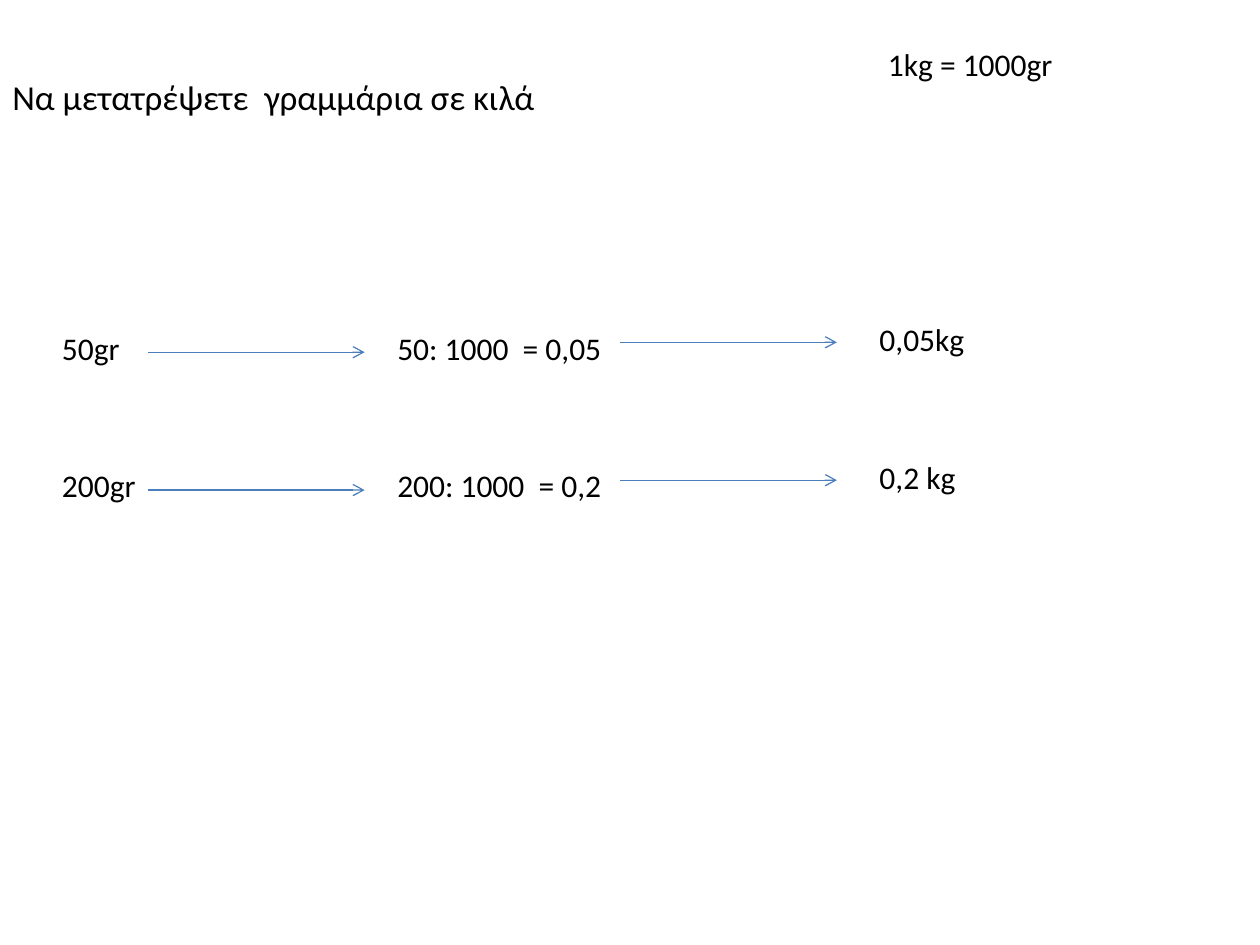
from dataclasses import dataclass

from lxml import etree
from pptx import Presentation
from pptx.dml.color import RGBColor
from pptx.enum.shapes import MSO_CONNECTOR
from pptx.enum.text import MSO_AUTO_SIZE
from pptx.oxml.ns import qn
from pptx.util import Cm, Pt

STRAIGHT = MSO_CONNECTOR.STRAIGHT
FIT_SHAPE = MSO_AUTO_SIZE.SHAPE_TO_FIT_TEXT


@dataclass(frozen=True)
class Theme:
    font: str = "Calibri"
    text: RGBColor = RGBColor(0x00, 0x00, 0x00)
    arrow: RGBColor = RGBColor(0x4B, 0x7E, 0xBC)
    title_size: int = 20
    body_size: int = 18
    line_width: float = 0.75


THEME = Theme()
TEXT_HEIGHT = 1.02
ARROW_LENGTH = 4.37
ROW_TOP, ROW_PITCH = 6.32, 2.78

# Grams, division and kilograms for each row
CONVERSIONS = [
    ("50gr", "50: 1000  = 0,05", "0,05kg"),
    ("200gr", "200: 1000  = 0,2", "0,2 kg"),
]
# Left, top and width of each text, relative to the row
TEXT_CELLS = [(0, 0.18, 2.39), (6.76, 0.18, 5.56), (16.48, 0, 3.96)]
# Left and top of each arrow, relative to the row
ARROW_STARTS = [(1.98, 0.78), (11.5, 0.58)]


def add_text(slide, text, left, top, width, height=TEXT_HEIGHT, size=THEME.body_size):
    s = slide.shapes.add_textbox(Cm(left), Cm(top), Cm(width), Cm(height))
    tf = s.text_frame
    tf.word_wrap = True
    tf.auto_size = FIT_SHAPE
    r = tf.paragraphs[0].add_run()
    r.text = text
    for name, value in {"name": THEME.font, "size": Pt(size)}.items():
        setattr(r.font, name, value)
    r.font.color.rgb = THEME.text


def add_arrow(slide, left, top):
    s = slide.shapes.add_connector(
        STRAIGHT, Cm(left), Cm(top), Cm(left + ARROW_LENGTH), Cm(top)
    )
    s.line.color.rgb = THEME.arrow
    s.line.width = Pt(THEME.line_width)
    etree.SubElement(s.line._get_or_add_ln(), qn("a:tailEnd"), type="arrow")
    etree.SubElement(s._element.spPr, qn("a:effectLst"))


def add_header(slide, left, top):
    # Task and the unit rule
    add_text(slide, "Nα μετατρέψετε  γραμμάρια σε κιλά", left, top + 0.61, 22.63,
             height=1.12, size=THEME.title_size)
    add_text(slide, "1kg = 1000gr", left + 17.65, top, 5.77)


def add_conversion(slide, texts, left, top):
    # Grams, division and kilograms, joined by arrows
    for text, (dx, dy, width) in zip(texts, TEXT_CELLS):
        add_text(slide, text, left + dx, top + dy, width)
    for dx, dy in ARROW_STARTS:
        add_arrow(slide, left + dx, top + dy)


def main():
    prs = Presentation()
    prs.slide_width, prs.slide_height = Cm(25.4), Cm(19.05)
    slide = prs.slides.add_slide(prs.slide_layouts[6])
    add_header(slide, 0, 0.79)
    for i, texts in enumerate(CONVERSIONS):
        add_conversion(slide, texts, 1, ROW_TOP + i * ROW_PITCH)
    prs.save("out.pptx")


if __name__ == "__main__":
    main()
